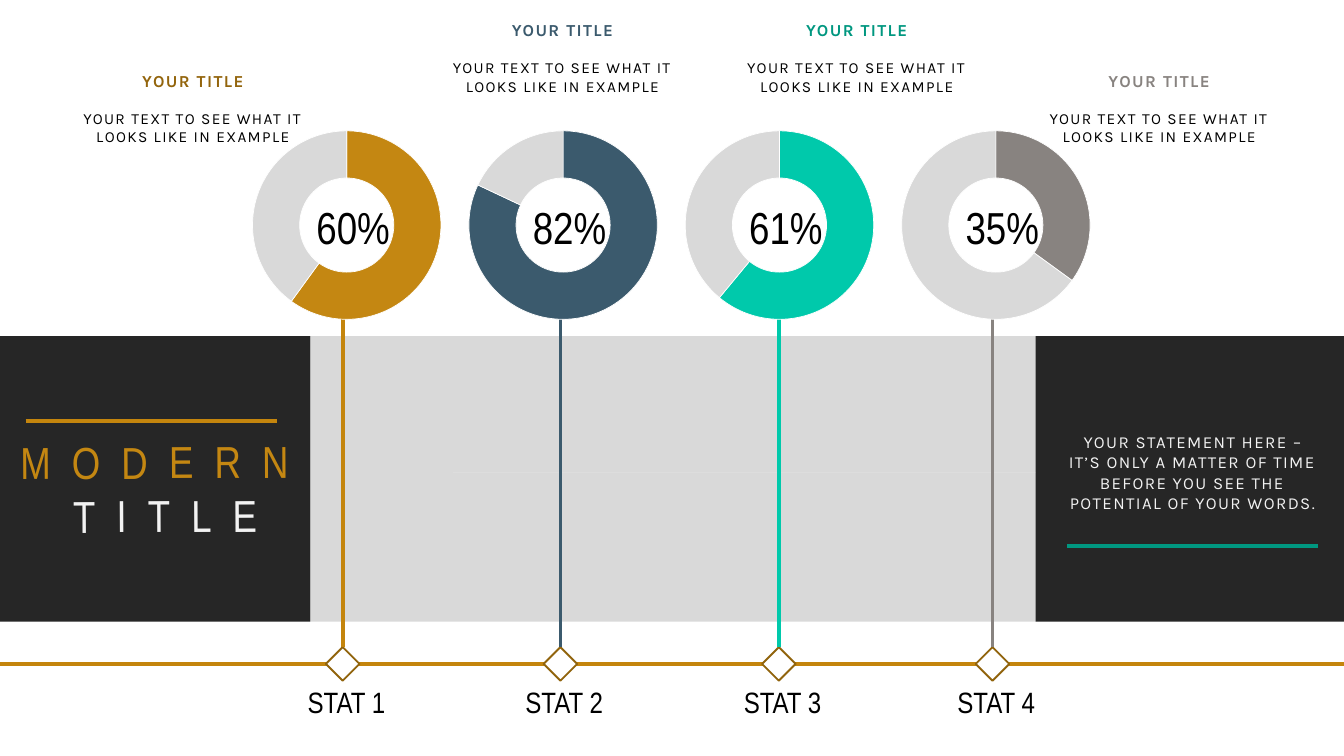
import pptx
import pptx.chart.data
import pptx.dml.color
import pptx.enum.chart
import pptx.enum.shapes
import pptx.enum.text
import pptx.oxml.ns
import pptx.util
from lxml import etree

RGBColor = pptx.dml.color.RGBColor
SHAPE = pptx.enum.shapes.MSO_SHAPE

WHITE = RGBColor(0xFF, 0xFF, 0xFF)
BLACK = RGBColor(0, 0, 0)
OFF_WHITE = RGBColor(0xF2, 0xF2, 0xF2)
LIGHT_GRAY = RGBColor(0xD9, 0xD9, 0xD9)
CHARCOAL = RGBColor(0x26, 0x26, 0x26)
GOLD = RGBColor(0xC4, 0x85, 0x0D)
RING_GOLD = RGBColor(0xC4, 0x87, 0x12)
BRONZE = RGBColor(0x93, 0x65, 0x0D)
DIAMOND_BRONZE = RGBColor(0x91, 0x64, 0x0D)
SLATE = RGBColor(0x3B, 0x5A, 0x6D)
MINT = RGBColor(0x00, 0xC9, 0xAB)
TEAL = RGBColor(0x00, 0x97, 0x80)
TAUPE = RGBColor(0x88, 0x83, 0x80)

NARROW, SANS = "Arial Narrow", "Karla"

TITLE = "MODERN\vTITLE"
STATEMENT = [
    "YOUR STATEMENT HERE –",
    "IT’S ONLY A MATTER OF TIME BEFORE YOU SEE THE POTENTIAL OF YOUR WORDS.",
]
CAPTION = ["YOUR TITLE", "YOUR TEXT TO SEE WHAT IT LOOKS LIKE IN EXAMPLE"]
STATS = [
    {"label": "STAT 1", "values": (60, 40), "ring": RING_GOLD, "stem": GOLD,
     "heading": BRONZE, "axis": 5.1, "caption": (1.12, 1)},
    {"label": "STAT 2", "values": (82, 18), "ring": SLATE, "stem": SLATE,
     "heading": SLATE, "axis": 8.34, "caption": (6.62, 0.25)},
    {"label": "STAT 3", "values": (61, None, 39), "ring": MINT, "stem": MINT,
     "heading": TEAL, "axis": 11.59, "caption": (11, 0.25)},
    {"label": "STAT 4", "values": (35, 65), "ring": TAUPE, "stem": TAUPE,
     "heading": TAUPE, "axis": 14.77, "caption": (15.5, 1)},
]
PANELS = [
    (4.63, 10.79, LIGHT_GRAY),
    (0, 4.62, CHARCOAL),
    (15.41, 4.62, CHARCOAL),
]
RULES = [(0.38, 6.27, GOLD), (15.88, 8.12, TEAL)]

COLUMNS = 20
RULE_WIDTH = 3.74
PANEL_TOP, PANEL_HEIGHT = 5, 4.25
AXIS_ROW, DIAMOND = 9.88, 0.5
RING_LEFT, RING_TOP, RING_SIZE, RING_PITCH = 3.62, 1.81, 3.08, 3.22

deck = pptx.Presentation()
deck.slide_width = pptx.util.Inches(20)
deck.slide_height = pptx.util.Inches(11.25)
CELL = deck.slide_width / COLUMNS
slide = deck.slides.add_slide(deck.slide_layouts[5])
shapes = slide.shapes


def grid(*cells):
    return [round(cell * CELL) for cell in cells]


def add_block(preset, area, fill, outline=None):
    block = shapes.add_shape(preset, *grid(*area))
    block.shadow.inherit = False
    block.fill.solid()
    block.fill.fore_color.rgb = fill
    if outline is None:
        block.line.fill.background()
    else:
        block.line.color.rgb = outline
        block.line.width = pptx.util.Pt(2)
    return block


def add_rule(start, end, color):
    rule = shapes.add_connector(
        pptx.enum.shapes.MSO_CONNECTOR.STRAIGHT, *grid(*start, *end))
    rule.line.color.rgb = color
    rule.line.width = pptx.util.Pt(4)
    etree.SubElement(rule.element.spPr, pptx.oxml.ns.qn("a:effectLst"))
    return rule


def style(run, size, color, font, bold=False, spacing=0):
    run.font.size = pptx.util.Pt(size)
    run.font.name = font
    run.font.bold = bold
    run.font.color.rgb = color
    if spacing:
        run._r.get_or_add_rPr().set("spc", str(round(spacing * 100)))


def prepare(frame):
    frame.word_wrap = True
    frame.auto_size = pptx.enum.text.MSO_AUTO_SIZE.NONE
    frame.vertical_anchor = pptx.enum.text.MSO_ANCHOR.TOP


def add_text(area, lines, looks):
    frame = shapes.add_textbox(*grid(*area)).text_frame
    prepare(frame)
    frame.text = "\n".join(lines)
    for paragraph, look in zip(frame.paragraphs, looks):
        paragraph.alignment = pptx.enum.text.PP_ALIGN.CENTER
        for run in paragraph.runs:
            style(run, **look)
    return frame


def add_ring(left, values, color):
    data = pptx.chart.data.CategoryChartData()
    data.categories = [str(n + 1) for n in range(len(values))]
    data.add_series("Series 1", values)
    chart = shapes.add_chart(
        pptx.enum.chart.XL_CHART_TYPE.DOUGHNUT,
        *grid(left, RING_TOP, RING_SIZE, RING_SIZE), data).chart
    chart.has_legend = False
    chart.has_title = False
    chart.font.size = pptx.util.Pt(10)
    chart.font.name = "Cabin"
    chart.font.color.rgb = BLACK
    plot = chart.plots[0]
    plot.vary_by_categories = True
    colors = [color] + [SLATE] * (len(values) - 2) + [LIGHT_GRAY]
    for number, slice_color in enumerate(colors):
        part = plot.series[0].points[number].format
        part.fill.solid()
        part.fill.fore_color.rgb = slice_color
        part.line.color.rgb = WHITE
        part.line.width = pptx.util.Pt(0.75)
    hole = next(chart.element.iter(pptx.oxml.ns.qn("c:holeSize")))
    hole.set("val", "85")


for left, width, fill in PANELS:
    add_block(SHAPE.RECTANGLE, (left, PANEL_TOP, width, PANEL_HEIGHT), fill)

hairline_left, hairline_right, hairline_row = grid(6.74, 15.41, 7.03)
outline = shapes.build_freeform(hairline_left, hairline_row)
outline.add_line_segments(
    [(hairline_right, hairline_row), (hairline_left, hairline_row)], close=True)
hairline = outline.convert_to_shape()
hairline.shadow.inherit = False
hairline.fill.solid()
hairline.fill.fore_color.rgb = WHITE
hairline.line.fill.background()

add_rule((0, AXIS_ROW), (COLUMNS, AXIS_ROW), GOLD)
for left, row, color in RULES:
    add_rule((left, row), (left + RULE_WIDTH, row), color)

number_look = {"size": 48, "color": BLACK, "font": NARROW}
label_look = {"size": 31.5, "color": BLACK, "font": NARROW}
body_look = {"size": 16.5, "color": BLACK, "font": SANS, "spacing": 1.5}
statement_look = {"size": 18, "color": OFF_WHITE, "font": SANS, "spacing": 1.5}

for index, stat in enumerate(STATS):
    axis = stat["axis"]
    diamond_top = AXIS_ROW - DIAMOND / 2
    diamond = add_block(
        SHAPE.DIAMOND, (axis - DIAMOND / 2, diamond_top, DIAMOND, DIAMOND),
        WHITE, DIAMOND_BRONZE)
    stem = add_rule((axis, 4.62), (axis, diamond_top), stat["stem"])
    stem.end_connect(diamond, 0)
    ring_left = RING_LEFT + index * RING_PITCH
    add_ring(ring_left, stat["values"], stat["ring"])
    add_text((ring_left + 0.8, 2.92, 1.67, 0.91),
             [f"{stat['values'][0]}%"], [number_look])
    add_text((axis - 1.22, 10.13, 2.55, 0.63), [stat["label"]], [label_look])
    heading_look = {"size": 18, "color": stat["heading"], "font": SANS,
                    "bold": True, "spacing": 1.5}
    caption = add_text((*stat["caption"], 3.5, 1.24), CAPTION,
                       [heading_look, body_look])
    caption.paragraphs[1].space_before = pptx.util.Pt(19.3)

add_text((15.62, 6.38, 4.25, 1.31), STATEMENT, [statement_look] * 2)

title = shapes.title
title.left, title.top, title.width, title.height = grid(-0.12, 6.41, 5.15, 1.72)
title.rotation = 359.7
prepare(title.text_frame)
headline = title.text_frame.paragraphs[0]
headline.text = TITLE
headline.alignment = pptx.enum.text.PP_ALIGN.CENTER
for run, color in zip(headline.runs, (RING_GOLD, OFF_WHITE)):
    style(run, 48, color, NARROW, spacing=22.5)
title.element.getparent().append(title.element)

deck.save("out.pptx")
